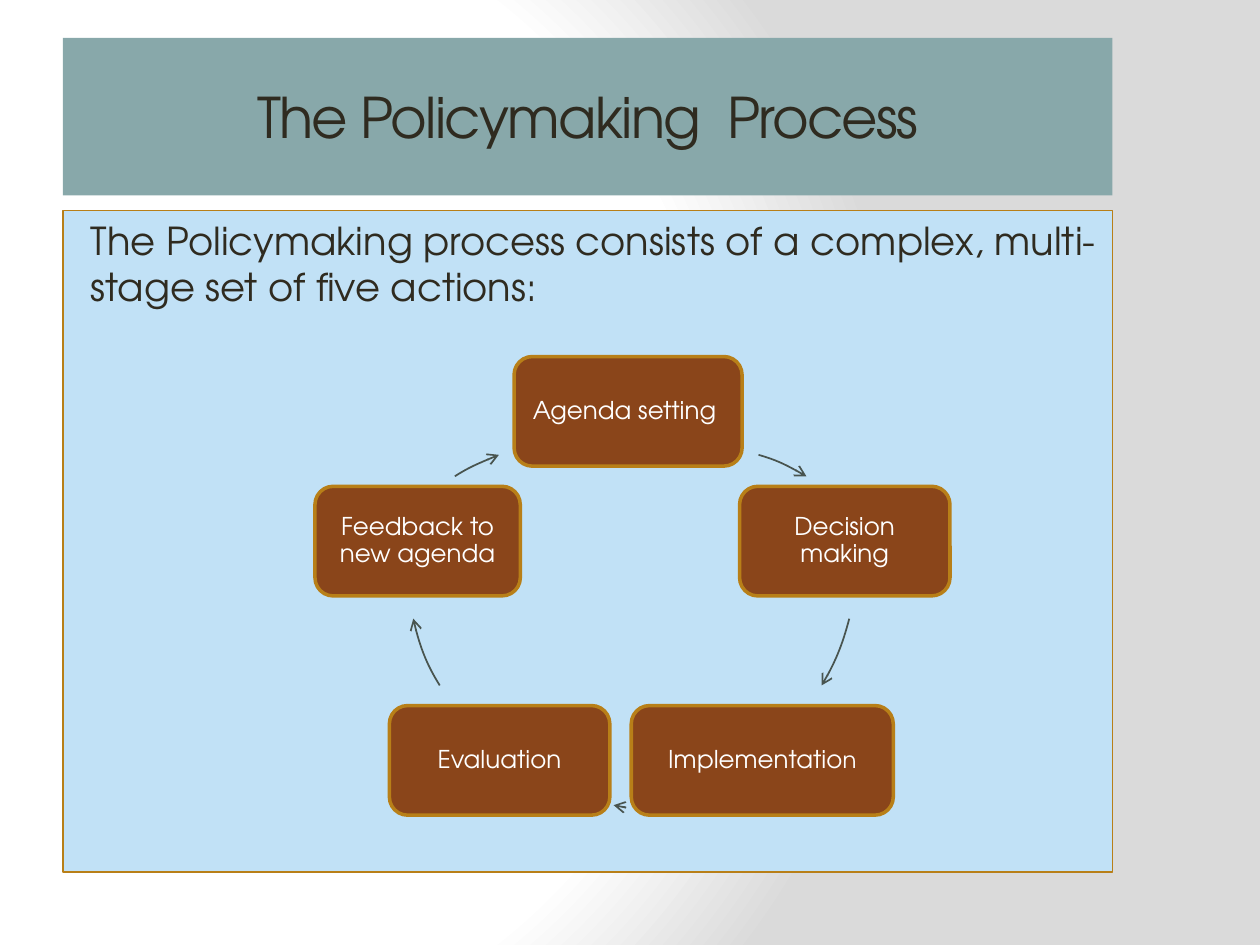
"""Build a slide showing the policymaking cycle."""
from dataclasses import dataclass

from pptx import Presentation
from pptx.dml.color import RGBColor
from pptx.enum.shapes import MSO_SHAPE
from pptx.enum.text import MSO_ANCHOR, PP_ALIGN
from pptx.oxml import parse_xml
from pptx.oxml.ns import nsdecls, qn
from pptx.util import Inches, Pt

FONT = "TeX Gyre Adventor"
COLORS = {
    "title": "88A8AA", "panel": "C1E1F6", "stage": "8A451A", "edge": "B87F18",
    "arrow": "48544F", "ink": "2F2B20", "white": "FFFFFF", "gray": "DADADA",
}
STAGE_H = 0.87
CYCLE_SIZE = Inches(3.49)
FRAME = {"word_wrap": True, "vertical_anchor": MSO_ANCHOR.MIDDLE}
STAGE_FRAME = FRAME | {f"margin_{side}": Inches(0.06)
                       for side in ("left", "top", "right", "bottom")}
CENTERED = {"alignment": PP_ALIGN.CENTER}


@dataclass
class Stage:
    """A rounded box of the cycle, in inches, with (text, size) runs."""
    runs: tuple
    left: float
    top: float
    width: float


@dataclass
class Arc:
    """A cubic curve inside the square of its circle, in inches."""
    left: float
    top: float
    points: tuple


STAGES = [
    Stage((("Agenda setting ", 14),), 4.08, 2.83, 1.81),
    Stage((("Decision making", 14),), 5.87, 3.86, 1.67),
    Stage((("Implementatio", 14), ("n", 13)), 5.01, 5.6, 2.08),
    Stage((("Evaluation", 14),), 3.09, 5.6, 1.75),
    Stage((("Feedback to new agenda", 14),), 2.5, 3.86, 1.63),
]
ARCS = [
    Arc(3.75, 3.53, ((6.02, 3.61), (6.16, 3.65), (6.28, 3.71), (6.4, 3.78))),
    Arc(3.29, 2.79, ((6.74, 4.91), (6.69, 5.1), (6.62, 5.28), (6.52, 5.44))),
    Arc(3.45, 2.94, ((4.97, 6.41), (4.94, 6.4), (4.91, 6.4), (4.87, 6.39))),
    Arc(3.24, 2.81, ((3.49, 5.44), (3.39, 5.28), (3.32, 5.1), (3.28, 4.91))),
    Arc(2.8, 3.52, ((3.61, 3.78), (3.72, 3.71), (3.84, 3.66), (3.96, 3.61))),
]


def rgb(name: str) -> RGBColor:
    """Return a named colour."""
    return RGBColor.from_string(COLORS[name])


def set_all(target, values: dict) -> None:
    """Set each named attribute on the target."""
    for name, value in values.items():
        setattr(target, name, value)


def set_line(sp, color: str, width: float) -> None:
    """Give a shape a solid line."""
    sp.line.color.rgb = rgb(color)
    sp.line.width = Pt(width)


def add_box(s, kind, at: tuple, fill: str, line_width: float = 0):
    """Add a filled shape, with an edge if it has a line width."""
    sp = s.shapes.add_shape(kind, *map(Inches, at))
    sp.shadow.inherit = False
    sp.fill.solid()
    sp.fill.fore_color.rgb = rgb(fill)
    if line_width:
        set_line(sp, "edge", line_width)
    else:
        sp.line.fill.background()
    return sp


def add_text(sp, runs: tuple, color: str, frame: dict, para: dict):
    """Write one paragraph into a shape and return it."""
    tf = sp.text_frame
    set_all(tf, frame)
    p = tf.paragraphs[0]
    set_all(p, para)
    for text, size in runs:
        r = p.add_run()
        r.text = text
        set_all(r.font, {"name": FONT, "size": Pt(size)})
        r.font.color.rgb = rgb(color)
    return p


def add_stage(s, stage: Stage) -> None:
    """Draw one stage of the cycle."""
    at = (stage.left, stage.top, stage.width, STAGE_H)
    sp = add_box(s, MSO_SHAPE.ROUNDED_RECTANGLE, at, "stage", 2)
    add_text(sp, stage.runs, "white", STAGE_FRAME, CENTERED | {"line_spacing": 0.9})


def add_arc(s, arc: Arc) -> None:
    """Draw one curved arrow."""
    left, top = Inches(arc.left), Inches(arc.top)
    pts = [(Inches(x), Inches(y)) for x, y in arc.points]
    builder = s.shapes.build_freeform(*pts[0])
    builder.add_line_segments(pts[1:], close=False)
    sp = builder.convert_to_shape()
    set_all(sp, {"left": left, "top": top, "width": CYCLE_SIZE, "height": CYCLE_SIZE})
    start, *rest = [f'<a:pt x="{x - left}" y="{y - top}"/>' for x, y in pts]
    old = sp.element.find(".//" + qn("a:path"))
    old.getparent().replace(old, parse_xml(
        f'<a:path {nsdecls("a")} w="{CYCLE_SIZE}" h="{CYCLE_SIZE}">'
        f'<a:moveTo>{start}</a:moveTo>'
        f'<a:cubicBezTo>{"".join(rest)}</a:cubicBezTo></a:path>'))
    sp.shadow.inherit = False
    sp.fill.background()
    set_line(sp, "arrow", 1)
    ln = sp.element.spPr.find(qn("a:ln"))
    ln.append(parse_xml(f'<a:tailEnd {nsdecls("a")} type="arrow"/>'))


def set_background(s) -> None:
    """Fill the background with a circular gradient."""
    s.background.fill.gradient()
    old = s.element.find(".//" + qn("a:gradFill"))
    stops = "".join(f'<a:gs pos="{pos * 1000}"><a:srgbClr val="{COLORS[c]}"/></a:gs>'
                    for pos, c in ((0, "white"), (75, "white"), (100, "gray")))
    old.getparent().replace(old, parse_xml(
        f'<a:gradFill {nsdecls("a")} rotWithShape="1"><a:gsLst>{stops}</a:gsLst>'
        '<a:path path="circle"><a:fillToRect l="20000" t="50000" r="100000" b="50000"/>'
        '</a:path></a:gradFill>'))


def main() -> None:
    """Build and save the slide."""
    prs = Presentation()
    set_all(prs, {"slide_width": Inches(10), "slide_height": Inches(7.5)})
    s = prs.slides.add_slide(prs.slide_layouts[6])
    set_background(s)

    title = add_box(s, MSO_SHAPE.RECTANGLE, (0.5, 0.3, 8.33, 1.25), "title")
    p = add_text(title, (("The Policymaking  Process", 32),), "ink", FRAME, CENTERED)
    p.runs[0].font._element.set("spc", "-100")

    panel = add_box(s, MSO_SHAPE.RECTANGLE, (0.5, 1.67, 8.33, 5.25), "panel", 0.75)
    intro = ("The Policymaking process consists of a complex, "
             "multi-stage set of five actions:")
    add_text(panel, ((intro, 22),), "ink",
             FRAME | {"vertical_anchor": MSO_ANCHOR.TOP, "margin_left": Inches(0.22)},
             {"alignment": PP_ALIGN.LEFT})

    for stage, arc in zip(STAGES, ARCS):
        add_stage(s, stage)
        add_arc(s, arc)
    prs.save("out.pptx")


if __name__ == "__main__":
    main()
